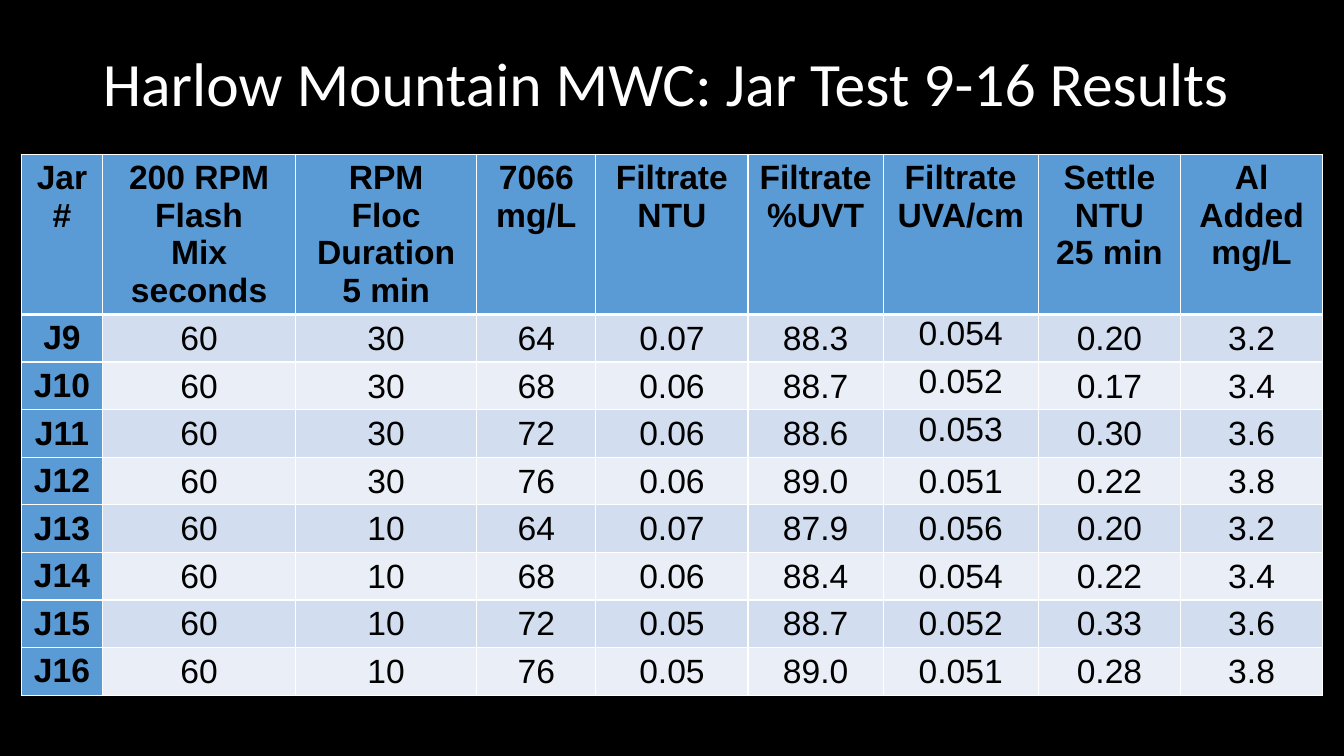
from lxml.etree import SubElement
from pptx import Presentation
from pptx.dml.color import RGBColor
from pptx.enum.text import MSO_ANCHOR, PP_ALIGN
from pptx.oxml.ns import qn
from pptx.util import Inches, Pt

# Content
TITLE = "Harlow Mountain MWC: Jar Test 9-16 Results"
HEADS = [
    "Jar\n#", "200 RPM\nFlash\nMix\nseconds", "RPM\nFloc\nDuration\n5 min",
    "7066\nmg/L", "Filtrate\nNTU", "Filtrate\n%UVT", "Filtrate\nUVA/cm",
    "Settle\nNTU\n25 min", "Al\nAdded\nmg/L",
]
JARS = [
    ("J9", "60", "30", "64", "0.07", "88.3", "0.054", "0.20", "3.2"),
    ("J10", "60", "30", "68", "0.06", "88.7", "0.052", "0.17", "3.4"),
    ("J11", "60", "30", "72", "0.06", "88.6", "0.053", "0.30", "3.6"),
    ("J12", "60", "30", "76", "0.06", "89.0", "0.051", "0.22", "3.8"),
    ("J13", "60", "10", "64", "0.07", "87.9", "0.056", "0.20", "3.2"),
    ("J14", "60", "10", "68", "0.06", "88.4", "0.054", "0.22", "3.4"),
    ("J15", "60", "10", "72", "0.05", "88.7", "0.052", "0.33", "3.6"),
    ("J16", "60", "10", "76", "0.05", "89.0", "0.051", "0.28", "3.8"),
]
WIDTHS = [0.81, 1.91, 1.8, 1.18, 1.51, 1.34, 1.54, 1.41, 1.41]
HEAD_H, ROW_H = 1.59, 0.47
UVA_COL, TOP_ROWS = 6, (1, 2, 3)
COLORS = {"back": "000000", "title": "FFFFFF", "text": "000000",
          "rule": "FFFFFF", "head": "5B9BD5", "odd": "D2DEEF", "even": "EAEFF7"}
INSETS = {"margin_left": Inches(0.01), "margin_right": Inches(0.01),
          "margin_top": Inches(0.01), "margin_bottom": 0}


def color(key):
    return RGBColor.from_string(COLORS[key])


def apply(item, form):
    for key, value in form.items():
        setattr(item, key, value)


def style(par, align, name, size, bold, key):
    par.alignment = align
    apply(par.font, {"name": name, "size": Pt(size), "bold": bold})
    par.font.color.rgb = color(key)


def border(cell, row):
    props = cell._tc.get_or_add_tcPr()
    wide = {"lnT": row == 1, "lnB": row == 0}
    for side in ("lnL", "lnR", "lnT", "lnB"):
        line = SubElement(props, qn("a:" + side), w=str(Pt(3 if wide.get(side) else 1)))
        fill = SubElement(line, qn("a:solidFill"))
        SubElement(fill, qn("a:srgbClr"), val=COLORS["rule"])


# Slide and background
deck = Presentation()
apply(deck, {"slide_width": Inches(13.33), "slide_height": Inches(7.5)})
slide = deck.slides.add_slide(deck.slide_layouts[5])
slide.background.fill.solid()
slide.background.fill.fore_color.rgb = color("back")

# Title
title = slide.shapes.title
apply(title, {"left": Inches(0.92), "top": Inches(0.13),
              "width": Inches(11.5), "height": Inches(1.45)})
title.text_frame.text = TITLE
title.text_frame.vertical_anchor = MSO_ANCHOR.MIDDLE
head = title.text_frame.paragraphs[0]
head.line_spacing = 0.9
style(head, PP_ALIGN.LEFT, "Calibri", 44, False, "title")

# Table grid
rows = [HEADS, *JARS]
table = slide.shapes.add_table(
    len(rows), len(HEADS), Inches(0.21), Inches(1.53),
    Inches(sum(WIDTHS)), Inches(HEAD_H + ROW_H * len(JARS))).table
table.first_col = True
for col, width in zip(table.columns, WIDTHS):
    col.width = Inches(width)
for r, row in enumerate(table.rows):
    row.height = Inches(ROW_H if r else HEAD_H)

# Table cells
for r, row in enumerate(rows):
    for c, text in enumerate(row):
        cell = table.cell(r, c)
        label = r == 0 or c == 0
        cell.text = text
        border(cell, r)
        cell.fill.solid()
        cell.fill.fore_color.rgb = color("head" if label else "odd" if r % 2 else "even")
        if not label:
            apply(cell, INSETS)
        high = label or (c == UVA_COL and r in TOP_ROWS)
        cell.vertical_anchor = MSO_ANCHOR.TOP if high else MSO_ANCHOR.MIDDLE
        for par in cell.text_frame.paragraphs:
            style(par, PP_ALIGN.CENTER, "Arial", 24, label, "text")

deck.save("out.pptx")
